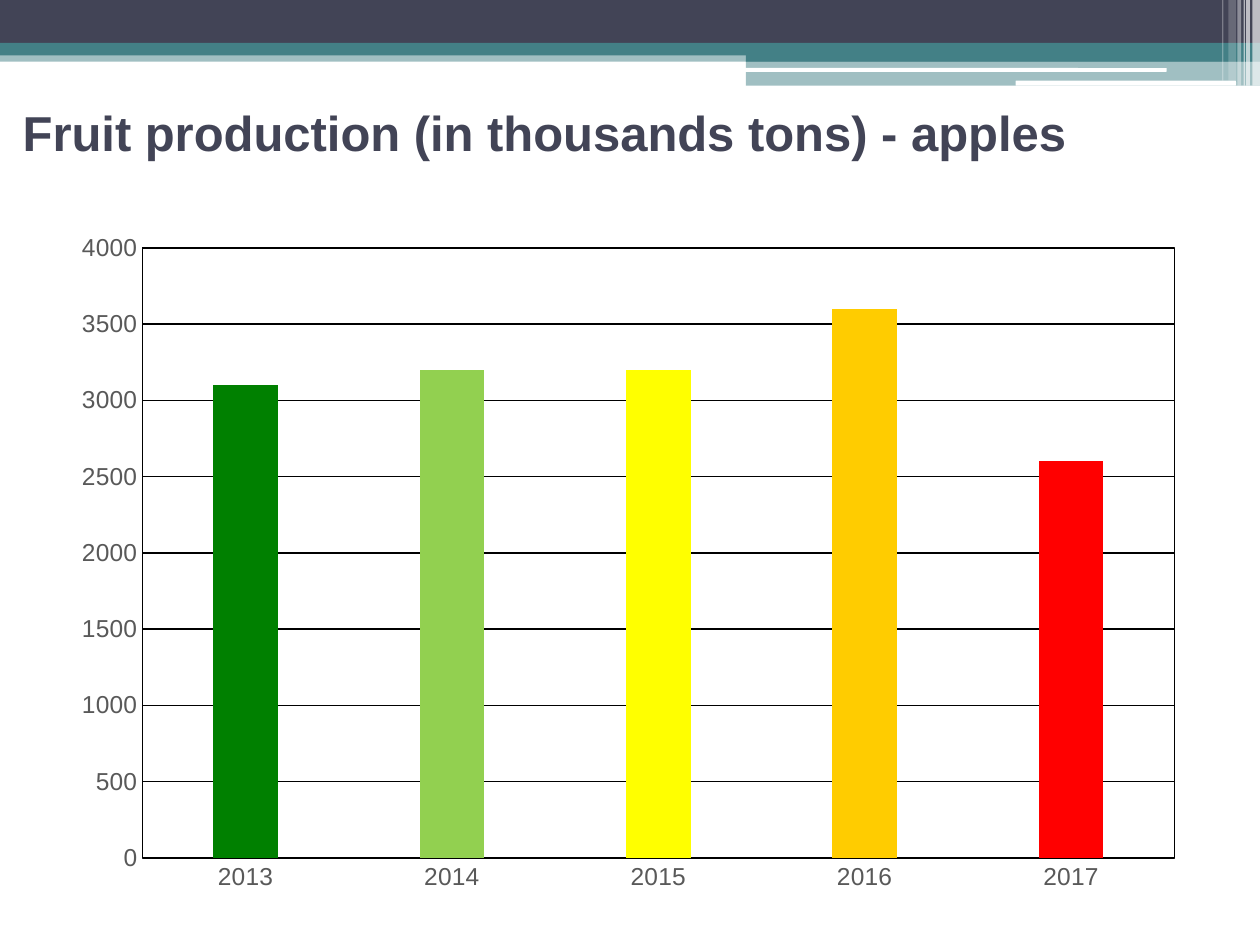
from dataclasses import dataclass

from lxml.etree import SubElement
from pptx import Presentation
from pptx.chart.data import CategoryChartData
from pptx.dml.color import RGBColor
from pptx.enum.chart import XL_CHART_TYPE as CHART, XL_TICK_MARK as TICK
from pptx.enum.shapes import MSO_SHAPE as SHAPE
from pptx.enum.text import MSO_ANCHOR as ANCHOR, MSO_AUTO_SIZE as FIT, PP_ALIGN as ALIGN
from pptx.oxml import parse_xml
from pptx.oxml.ns import nsdecls, qn
from pptx.util import Inches, Pt


@dataclass(frozen=True)
class Theme:
    dark: str = "424456"
    teal: str = "438086"
    white: str = "FFFFFF"
    black: str = "000000"
    label: str = "595959"
    series: str = "53548A"
    bars: tuple = ("008000", "92D050", "FFFF00", "FFCC00", "FF0000")
    font: str = "Arial"
    chart_font: str = "Cambria"
    title_size: int = 28
    label_size: int = 14
    chart_size: int = 10
    line: float = 0.75


def rgb(value):
    return RGBColor.from_string(value)


def set_font(font, name, size, color, bold=False):
    font.name, font.size, font.bold = name, Pt(size), bold
    font.color.rgb = rgb(color)


def write_text(tf, text, align=ALIGN.LEFT, anchor=ANCHOR.MIDDLE, **font):
    tf.word_wrap, tf.auto_size, tf.vertical_anchor = True, FIT.NONE, anchor
    p = tf.paragraphs[0]
    p.alignment = align
    r = p.add_run()
    r.text = text
    set_font(r.font, **font)


def set_line(line, color, width):
    line.color.rgb = rgb(color)
    line.width = Pt(width)


class SlideBuilder:
    """Draws styled elements on the current slide."""

    def __init__(self, slide, theme):
        self.s, self.theme = slide, theme

    def band(self, box, color, alpha=100, shape=SHAPE.RECTANGLE):
        sp = self.s.shapes.add_shape(shape, *map(Inches, box))
        sp.shadow.inherit = False
        sp.fill.solid()
        sp.fill.fore_color.rgb = rgb(color)
        sp.line.fill.background()
        if alpha < 100:
            clr = sp.fill._xPr.find(".//" + qn("a:srgbClr"))
            SubElement(clr, qn("a:alpha"), val=str(alpha * 1000))

    def title(self, text, box):
        t, sp = self.theme, self.s.shapes.title
        sp.left, sp.top, sp.width, sp.height = map(Inches, box)
        write_text(sp.text_frame, text, name=t.font, size=t.title_size,
                   color=t.dark, bold=True)
        self.s.shapes._spTree.append(sp._element)

    def column_chart(self, box, cats, name, vals, top, step, layout):
        t, data = self.theme, CategoryChartData()
        data.categories = cats
        data.add_series(name, vals)
        chart = self.s.shapes.add_chart(
            CHART.COLUMN_CLUSTERED, *map(Inches, box), data).chart
        chart.has_legend = chart.has_title = False
        set_font(chart.font, t.chart_font, t.chart_size, t.black)
        plot = chart.plots[0]
        plot.gap_width, plot.overlap, plot.vary_by_categories = 219, -27, False
        series = plot.series[0]
        series.format.fill.solid()
        series.format.fill.fore_color.rgb = rgb(t.series)
        for i, color in enumerate(t.bars):
            fill = series.points[i].format.fill
            fill.solid()
            fill.fore_color.rgb = rgb(color)
        for axis in (chart.category_axis, chart.value_axis):
            axis.major_tick_mark = axis.minor_tick_mark = TICK.NONE
            set_font(axis.tick_labels.font, t.font, t.label_size, t.label)
        set_line(chart.category_axis.format.line, t.black, t.line)
        axis = chart.value_axis
        axis.minimum_scale, axis.maximum_scale, axis.major_unit = 0, top, step
        axis.format.line.fill.background()
        axis.has_major_gridlines = True
        set_line(axis.major_gridlines.format.line, t.black, t.line)
        self.plot_frame(chart, layout)

    def plot_frame(self, chart, layout):
        t = self.theme
        area = chart._chartSpace.find(".//" + qn("c:plotArea"))
        for old in area.findall(qn("c:layout")):
            area.remove(old)
        places = "".join(f'<c:{k} val="{v}"/>' for k, v in zip("xywh", layout))
        area.insert(0, parse_xml(
            f'<c:layout {nsdecls("c")}><c:manualLayout><c:layoutTarget val="inner"/>'
            f'<c:xMode val="edge"/><c:yMode val="edge"/>{places}'
            '</c:manualLayout></c:layout>'))
        area.append(parse_xml(
            f'<c:spPr {nsdecls("c", "a")}><a:noFill/><a:ln w="{Pt(t.line)}"><a:solidFill>'
            f'<a:srgbClr val="{t.black}"/></a:solidFill></a:ln></c:spPr>'))


def main():
    t = Theme()
    prs = Presentation()
    prs.slide_width, prs.slide_height = Inches(10), Inches(7.5)
    b = SlideBuilder(prs.slides.add_slide(prs.slide_layouts[5]), t)

    for box, color, alpha in (
        ((0, 0.4, 10, 0.09), t.teal, 50),
        ((0, 0, 10, 0.34), t.dark, 100),
        ((0, 0.34, 10, 0.1), t.teal, 100),
        ((5.92, 0.39, 4.08, 0.1), t.teal, 100),
        ((5.92, 0.48, 4.08, 0.2), t.teal, 50),
    ):
        b.band(box, color, alpha)
    for box in ((5.91, 0.54, 3.35, 0.03), (8.06, 0.64, 1.75, 0.04)):
        b.band(box, t.white, shape=SHAPE.ROUNDED_RECTANGLE)
    for left, width, height, alpha in (
        (9.94, 0.06, 0.68, 65), (9.89, 0.03, 0.68, 65), (9.87, 0.01, 0.68, 60),
        (9.82, 0.03, 0.68, 40), (9.75, 0.06, 0.64, 20), (9.7, 0.01, 0.64, 30),
    ):
        b.band((left, 0, width, height), t.white, alpha)

    b.title("Fruit production (in thousands tons) - apples", (0.08, 0.67, 9.75, 0.75))
    b.column_chart((0.5, 1.75, 9, 5.44), [str(y) for y in range(2013, 2018)],
                   "Series 1", (3100, 3200, 3200, 3600, 2600),
                   top=4000, step=500, layout=(0.07, 0.04, 0.91, 0.89))
    prs.save("out.pptx")


if __name__ == "__main__":
    main()
